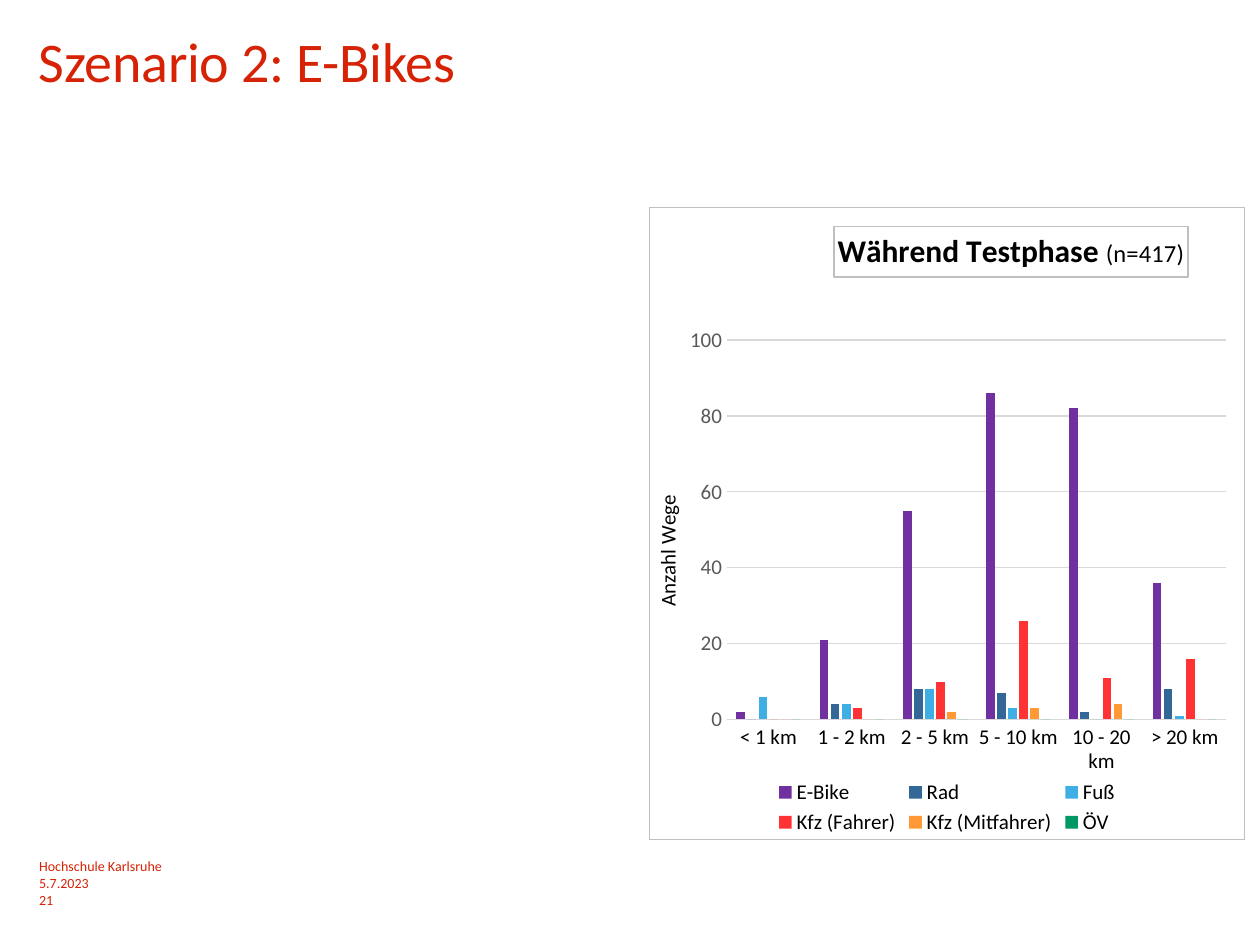
from lxml.etree import SubElement
from pptx import Presentation
from pptx.chart.data import CategoryChartData
from pptx.dml.color import RGBColor
from pptx.enum.chart import XL_CHART_TYPE as ChartType
from pptx.enum.chart import XL_LEGEND_POSITION as LegendPosition
from pptx.enum.chart import XL_TICK_MARK as TickMark
from pptx.oxml import parse_xml
from pptx.oxml.ns import nsdecls, qn
from pptx.util import Inches, Pt

FONT = "Calibri"
COLORS = {
    "footer": "D62305",
    "title": "D72305",
    "black": "000000",
    "scale": "595959",
    "grid": "D9D9D9",
    "border": "BFBFBF",
    "background": "FFFFFF",
}
DISTANCES = ["< 1 km", "1 - 2 km", "2 - 5 km", "5 - 10 km", "10 - 20 km", "> 20 km"]
MODES = [
    ("E-Bike", "7030A0", (2, 21, 55, 86, 82, 36)),
    ("Rad", "336797", (0, 4, 8, 7, 2, 8)),
    ("Fuß", "3FAEE5", (6, 4, 8, 3, 0, 1)),
    ("Kfz (Fahrer)", "FF3334", (0, 3, 10, 26, 11, 16)),
    ("Kfz (Mitfahrer)", "FF9935", (0, 0, 2, 3, 4, 0)),
    ("ÖV", "009865", (0, 0, 0, 0, 0, 0)),
]


def style_font(font, size, color="black", bold=False):
    font.name = FONT
    font.size = Pt(size)
    font.bold = bold
    font.color.rgb = RGBColor.from_string(COLORS[color])


def style_line(line, color):
    line.color.rgb = RGBColor.from_string(COLORS[color])
    line.width = Pt(0.75)


def add_run(paragraph, text, size, color="black", bold=False, tracking=None):
    run = paragraph.add_run()
    run.text = text
    style_font(run.font, size, color, bold)
    if tracking is not None:
        run.font._element.set("spc", str(round(tracking * 100)))


def add_text(slide, text, left, top, width, height, size, color,
             wrap=True, line_spacing=None, tracking=None):
    frame = slide.shapes.add_textbox(
        Inches(left), Inches(top), Inches(width), Inches(height)).text_frame
    frame.word_wrap = wrap
    frame.margin_left = frame.margin_right = 0
    frame.margin_top = frame.margin_bottom = 0
    for index, line in enumerate(text.split("\n")):
        paragraph = frame.add_paragraph() if index else frame.paragraphs[0]
        if line_spacing:
            paragraph.line_spacing = Pt(line_spacing)
        add_run(paragraph, line, size, color, tracking=tracking)


def set_layout(parent, index, settings):
    for previous in parent.findall(qn("c:layout")):
        parent.remove(previous)
    layout = parse_xml(f"<c:layout {nsdecls('c')}><c:manualLayout/></c:layout>")
    for name, value in settings.items():
        SubElement(layout[0], qn(f"c:{name}")).set("val", str(value))
    parent.insert(index, layout)


def frame_chart(chart):
    chart._chartSpace.find(qn("c:chart")).addnext(parse_xml(
        f"<c:spPr {nsdecls('c', 'a')}>"
        f'<a:solidFill><a:srgbClr val="{COLORS["background"]}"/></a:solidFill>'
        f'<a:ln w="{Pt(0.75)}"><a:solidFill><a:srgbClr val="{COLORS["border"]}"/>'
        "</a:solidFill></a:ln></c:spPr>"))


def title_chart(chart):
    heading = chart.chart_title
    paragraph = heading.text_frame.paragraphs[0]
    add_run(paragraph, "Während Testphase ", 18, bold=True)
    add_run(paragraph, "(n=417)", 14)
    style_line(heading.format.line, "border")
    set_layout(heading._element, 1,
               {"xMode": "edge", "yMode": "edge", "x": 0.31, "y": 0.03})


def style_axes(chart):
    distance_axis, trips_axis = chart.category_axis, chart.value_axis
    for axis, color in ((distance_axis, "black"), (trips_axis, "scale")):
        axis.major_tick_mark = axis.minor_tick_mark = TickMark.NONE
        style_font(axis.tick_labels.font, 12, color)
    style_line(distance_axis.format.line, "grid")
    trips_axis.format.line.fill.background()
    trips_axis.minimum_scale, trips_axis.maximum_scale = 0, 100
    trips_axis.major_unit = 20
    style_line(trips_axis.major_gridlines.format.line, "grid")
    add_run(trips_axis.axis_title.text_frame.paragraphs[0], "Anzahl Wege", 12)


def add_trips_chart(slide):
    data = CategoryChartData()
    data.categories = DISTANCES
    for name, _, trips in MODES:
        data.add_series(name, trips)
    chart = slide.shapes.add_chart(
        ChartType.COLUMN_CLUSTERED, Inches(5.15), Inches(1.64),
        Inches(4.73), Inches(5.03), data).chart
    style_font(chart.font, 10)
    frame_chart(chart)
    title_chart(chart)
    style_axes(chart)

    plot = chart.plots[0]
    plot.gap_width, plot.overlap = 219, -27
    plot.vary_by_categories = False
    for series, (_, color, _) in zip(plot.series, MODES):
        series.format.fill.solid()
        series.format.fill.fore_color.rgb = RGBColor.from_string(color)
    set_layout(chart._chartSpace.chart.plotArea, 0, {
        "layoutTarget": "inner", "xMode": "edge", "yMode": "edge",
        "x": 0.13, "y": 0.21, "w": 0.84, "h": 0.6})

    chart.has_legend = True
    chart.legend.position = LegendPosition.BOTTOM
    chart.legend.include_in_layout = False
    style_font(chart.legend.font, 12)


def main():
    deck = Presentation()
    deck.slide_width, deck.slide_height = Inches(10), Inches(7.5)
    slide = deck.slides.add_slide(deck.slide_layouts[6])
    add_text(slide, "Hochschule Karlsruhe\n5.7.2023\n21",
             0.31, 6.81, 3.38, 0.4, size=8, color="footer", wrap=False)
    add_text(slide, "Szenario 2: E-Bikes", 0.31, 0.33, 8.7, 0.66,
             size=32, color="title", line_spacing=30, tracking=-0.2)
    add_trips_chart(slide)
    deck.save("out.pptx")


if __name__ == "__main__":
    main()
